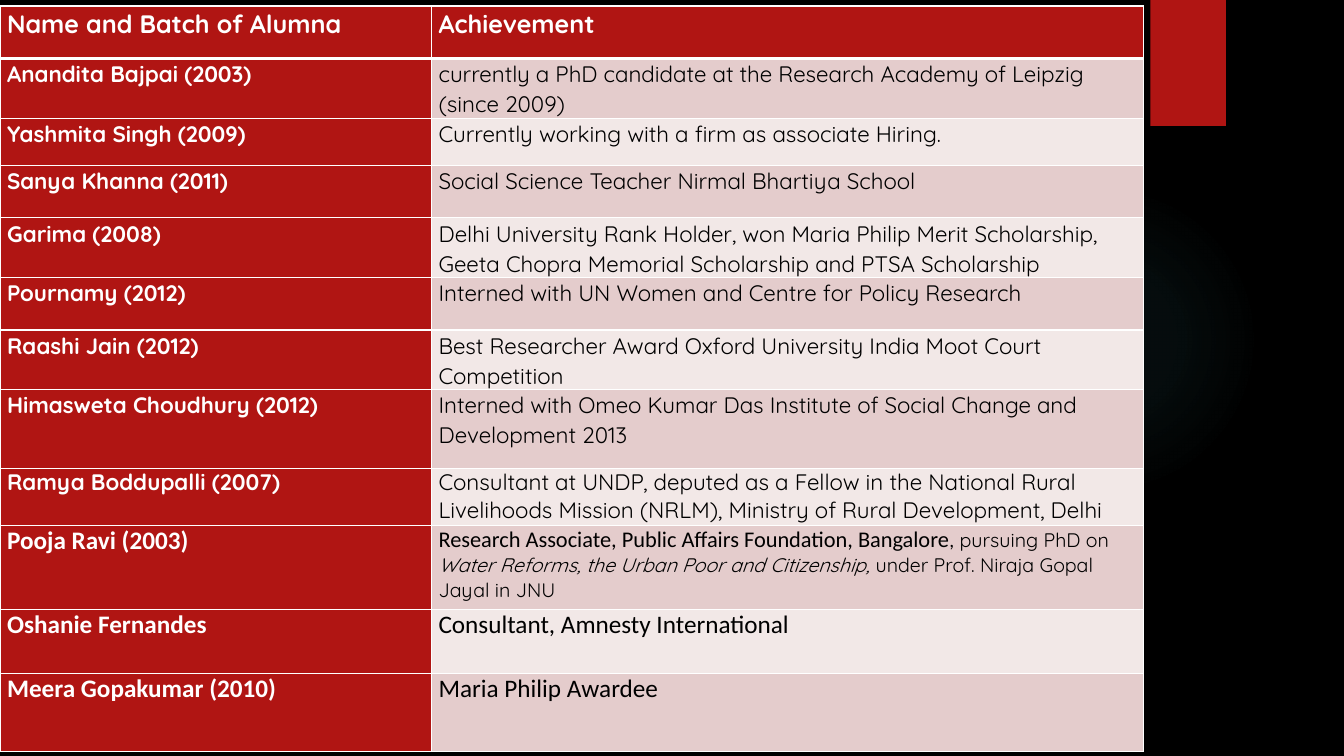
from lxml import etree
from pptx import Presentation
from pptx.dml.color import RGBColor
from pptx.enum.shapes import MSO_SHAPE
from pptx.oxml import parse_xml
from pptx.oxml.ns import qn
from pptx.util import Inches, Pt

COLORS = {"black": "000000", "red": "B01513", "white": "FFFFFF",
          "dark_band": "E4CCCC", "light_band": "F2E8E7", "glow": "50B9C1"}
COLUMNS = [4.28, 7.06]
HEADER = ("Name and Batch of Alumna", "Achievement")
QUICKSAND = {"font": "Quicksand", "size": 16, "spacing": 1.07}
QUICKSAND_SINGLE = {"font": "Quicksand", "size": 16}
CALIBRI = {"font": "Calibri", "size": 18}
SMALL = {"font": "Quicksand", "size": 14}
ALUMNAE = [
    (0.54, QUICKSAND, "Anandita Bajpai (2003)",
     "currently a PhD candidate at the Research Academy of Leipzig (since 2009)"),
    (0.47, QUICKSAND, "Yashmita Singh (2009)",
     "Currently working with a firm as associate Hiring."),
    (0.52, QUICKSAND, "Sanya Khanna (2011)",
     "Social Science Teacher Nirmal Bhartiya School"),
    (0.59, QUICKSAND, "Garima (2008)",
     "Delhi University Rank Holder, won Maria Philip Merit Scholarship, "
     "Geeta Chopra Memorial Scholarship and PTSA Scholarship"),
    (0.52, QUICKSAND, "Pournamy (2012)",
     "Interned with UN Women and Centre for Policy Research"),
    (0.54, QUICKSAND, "Raashi Jain (2012)",
     "Best Researcher Award Oxford University India Moot Court Competition"),
    (0.78, QUICKSAND, "Himasweta Choudhury (2012)",
     "Interned with Omeo Kumar Das Institute of Social Change and Development 2013"),
    (0.57, QUICKSAND_SINGLE, "Ramya Boddupalli (2007)",
     "Consultant at UNDP, deputed as a Fellow in the National Rural "
     "Livelihoods Mission (NRLM), Ministry of Rural Development, Delhi"),
    (0.83, CALIBRI, "Pooja Ravi (2003)", [
        ("Research Associate, Public Affairs Foundation, Bangalore",
         {"font": "Calibri", "size": 16}),
        (",", {"font": "Calibri", "size": 14}),
        (" pursuing PhD on ", SMALL),
        ("Water Reforms, the Urban Poor and Citizenship,", {**SMALL, "italic": True}),
        (" under Prof. Niraja Gopal Jayal in JNU", SMALL)]),
    (0.64, CALIBRI, "Oshanie Fernandes", "Consultant, Amnesty International"),
    (0.77, CALIBRI, "Meera Gopakumar (2010)", "Maria Philip Awardee"),
]


def rgb(name):
    return RGBColor.from_string(COLORS[name])


def add_text(p, text, font="Quicksand", size=16, color="black", bold=False,
             italic=False, spacing=None):
    if spacing:
        p.line_spacing = spacing
    r = p.add_run()
    r.text = text
    r.font.name, r.font.size = font, Pt(size)
    r.font.bold, r.font.italic = bold, italic
    r.font.color.rgb = rgb(color)


class SlideBuilder:
    """Holds the deck's style and the slide being built."""

    def __init__(self, prs):
        self.s = prs.slides.add_slide(prs.slide_layouts[6])
        self.s.background.fill.solid()
        self.s.background.fill.fore_color.rgb = rgb("black")

    def shape(self, kind, x, y, w, h, color):
        sp = self.s.shapes.add_shape(kind, Inches(x), Inches(y), Inches(w), Inches(h))
        sp.shadow.inherit = False
        sp.fill.solid()
        sp.fill.fore_color.rgb = rgb(color)
        sp.line.fill.background()
        return sp

    def glow(self, x, y, size):
        sp = self.shape(MSO_SHAPE.OVAL, x, y, size, size, "glow")
        stops = "".join(
            f'<a:gs pos="{pos * 1000}"><a:srgbClr val="{COLORS["glow"]}">'
            f'<a:alpha val="{alpha * 1000}"/></a:srgbClr></a:gs>'
            for pos, alpha in [(0, 7), (36, 6), (69, 0), (100, 0)])
        grad = parse_xml(
            '<a:gradFill xmlns:a="http://schemas.openxmlformats.org/drawingml/2006/main">'
            f'<a:gsLst>{stops}</a:gsLst><a:path path="circle">'
            '<a:fillToRect l="50000" t="50000" r="50000" b="50000"/></a:path></a:gradFill>')
        spPr = sp.fill._xPr
        spPr.replace(spPr.find(qn("a:solidFill")), grad)

    def borders(self, cell, top, bottom):
        tcPr = cell._tc.get_or_add_tcPr()
        for side, width in [("L", 1), ("R", 1), ("T", top), ("B", bottom)]:
            ln = etree.SubElement(tcPr, qn(f"a:ln{side}"), w=str(Pt(width)))
            fill = etree.SubElement(ln, qn("a:solidFill"))
            etree.SubElement(fill, qn("a:srgbClr"), val=COLORS["white"])

    def cell(self, cell, runs, fill, top=1, bottom=1):
        self.borders(cell, top, bottom)
        cell.fill.solid()
        cell.fill.fore_color.rgb = rgb(fill)
        cell.margin_left = cell.margin_right = Inches(0.07)
        cell.margin_top = cell.margin_bottom = 0
        p = cell.text_frame.paragraphs[0]
        for text, style in runs:
            add_text(p, text, **style)

    def table(self, x, y, header_height):
        heights = [header_height] + [row[0] for row in ALUMNAE]
        frame = self.s.shapes.add_table(len(heights), len(COLUMNS), Inches(x), Inches(y),
                                        Inches(sum(COLUMNS)), Inches(sum(heights)))
        tbl = frame.table
        tbl.horz_banding = False
        for col, width in zip(tbl.columns, COLUMNS):
            col.width = Inches(width)
        for row, height in zip(tbl.rows, heights):
            row.height = Inches(height)
        label = {"color": "white", "bold": True}
        for i, text in enumerate(HEADER):
            style = {**QUICKSAND, **label, "size": 18}
            self.cell(tbl.cell(0, i), [(text, style)], "red", bottom=3)
        for i, (_, style, name, achievement) in enumerate(ALUMNAE, 1):
            top = 3 if i == 1 else 1
            runs = [(achievement, style)] if isinstance(achievement, str) else achievement
            self.cell(tbl.cell(i, 0), [(name, {**style, **label})], "red", top)
            self.cell(tbl.cell(i, 1), runs, "dark_band" if i % 2 else "light_band", top)


def main():
    prs = Presentation()
    prs.slide_width, prs.slide_height = Inches(13.33), Inches(7.5)
    slide = SlideBuilder(prs)
    slide.glow(9.41, 1.83, 3.08)
    slide.shape(MSO_SHAPE.RECTANGLE, 11.41, 0, 0.75, 1.25, "red")
    slide.table(0, 0.06, header_height=0.52)
    prs.save("out.pptx")


if __name__ == "__main__":
    main()
